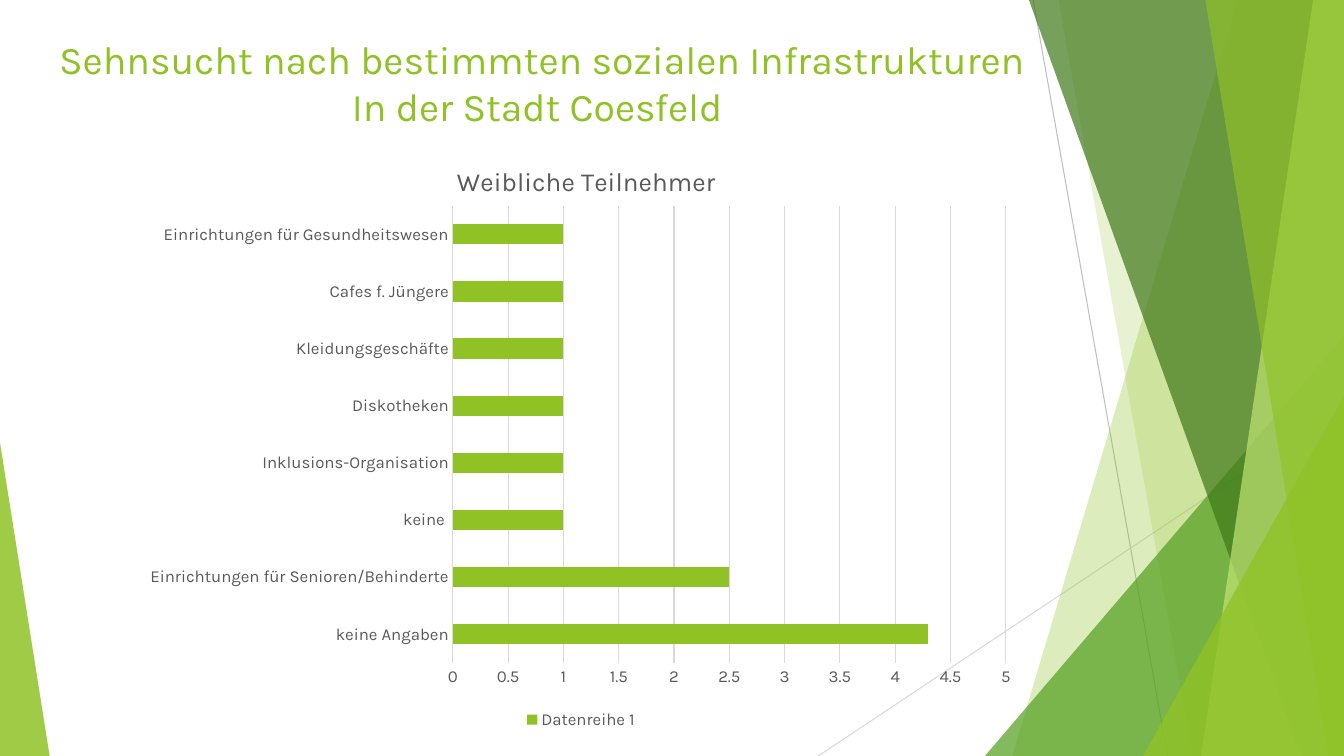
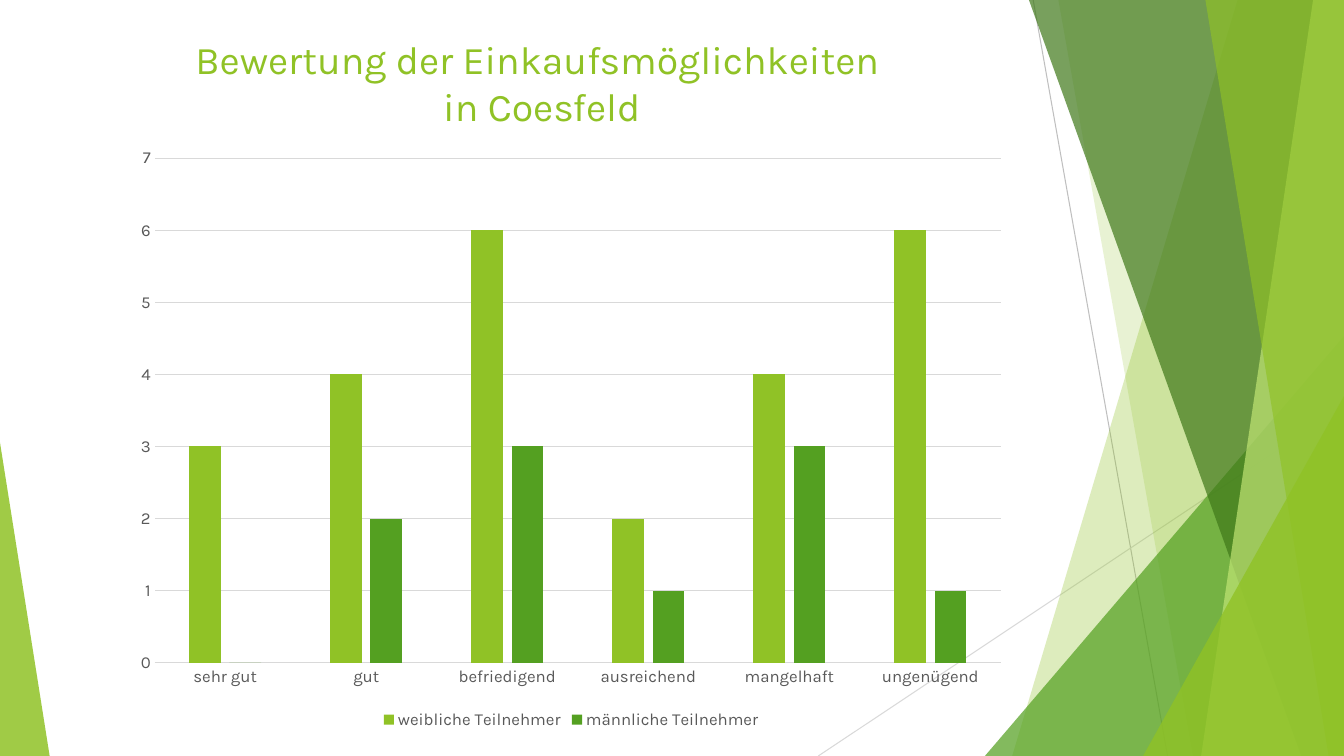
"""Build two survey result slides with a shared facet decoration."""
from collections import namedtuple

from lxml import etree
from pptx import Presentation
from pptx import util as u
from pptx.chart import data as chart_data
from pptx.dml import color
from pptx.enum import chart as chart_enum
from pptx.enum import shapes, text
from pptx.oxml import ns

Box = namedtuple("Box", "left top width height")

COLORS = {
    "lime": "90C226",
    "green": "54A021",
    "forest": "3F7819",
    "pale": "C0E474",
    "label": "595959",
    "grid": "D9D9D9",
    "ray": "BFBFBF",
}
FONT = "Karla"
SLIDE = Box(0, 0, 960, 540)
TITLE = Box(0, 22, 774, 75)

RAYS = [("ray", 738, 0, 834, 540), ("grid", 960, 290, 584.5, 540)]
FACETS = [
    ("veil", "lime", 30, (884, 723)),
    ("veil", "lime", 20, (756, 852)),
    ("corner", "green", 72, (703.5, 240, 256.5, 300, 1)),
    ("veil", "forest", 70, (735, 929.5)),
    ("veil", "pale", 70, (938, 858)),
    ("veil", "lime", 65, (861, 949)),
    ("corner", "lime", 80, (816.5, 283, 143.5, 257, 1)),
    ("corner", "lime", 85, (0, 316, 35.5, 224, 0)),
]

RESULTS = [
    {
        "title": ["Sehnsucht nach bestimmten sozialen Infrastrukturen", "In der Stadt Coesfeld "],
        "type": chart_enum.XL_CHART_TYPE.BAR_CLUSTERED,
        "box": Box(95, 97, 640, 427),
        "plot_box": Box(323.5, 147, 395, 326.5),
        "heading": "Weibliche Teilnehmer",
        "heading_box": Box(323, 114, 185, 22),
        "plot": {"gap_width": 182},
        "scale": {"minimum_scale": 0, "maximum_scale": 5, "major_unit": 0.5},
        "categories": [
            "keine Angaben", "Einrichtungen für Senioren/Behinderte", "keine ",
            "Inklusions-Organisation", "Diskotheken", "Kleidungsgeschäfte",
            "Cafes f. Jüngere", "Einrichtungen für Gesundheitswesen",
        ],
        "series": [("Datenreihe 1", "lime", [4.3, 2.5, 1, 1, 1, 1, 1, 1])],
    },
    {
        "title": ["Bewertung der Einkaufsmöglichkeiten ", "in Coesfeld"],
        "type": chart_enum.XL_CHART_TYPE.COLUMN_CLUSTERED,
        "box": Box(88, 97, 640, 427),
        "plot_box": Box(110.5, 113, 604.5, 360.5),
        "heading": None,
        "plot": {"gap_width": 219, "overlap": -27},
        "scale": {"minimum_scale": 0, "maximum_scale": 7, "major_unit": 1},
        "categories": [
            "sehr gut", "gut", "befriedigend", "ausreichend", "mangelhaft", "ungenügend",
        ],
        "series": [
            ("weibliche Teilnehmer", "lime", [3, 4, 6, 2, 4, 6]),
            ("männliche Teilnehmer", "green", [0, 2, 3, 1, 3, 1]),
        ],
    },
]


def rgb(name):
    """Return the named colour."""
    return color.RGBColor.from_string(COLORS[name])


def apply(target, values):
    """Set each attribute named in a dict."""
    for name, value in values.items():
        setattr(target, name, value)


def style_font(font, size, color_name):
    """Set the font face, size and colour."""
    apply(font, {"name": FONT, "size": u.Pt(size), "bold": False})
    font.color.rgb = rgb(color_name)


def style_line(line, color_name):
    """Make a line thin and coloured."""
    line.color.rgb = rgb(color_name)
    line.width = u.Pt(0.75)


def points(box):
    """Return the four lengths of a box in points."""
    return [u.Pt(value) for value in box]


def add_ray(slide, box, color_name, x1, y1, x2, y2):
    """Draw a thin diagonal line inside the box."""
    ends = points((box.left + x1, box.top + y1, box.left + x2, box.top + y2))
    ray = slide.shapes.add_connector(shapes.MSO_CONNECTOR.STRAIGHT, *ends)
    style_line(ray.line, color_name)
    etree.SubElement(ray.element.spPr, ns.qn("a:effectLst"))


def add_veil(slide, box, top_x, bottom_x):
    """Draw a slanted area that reaches the right edge of the box."""
    right, bottom = box.left + box.width, box.top + box.height
    builder = slide.shapes.build_freeform(u.Pt(box.left + top_x), u.Pt(box.top), scale=1.0)
    corners = [(right, box.top), (right, bottom), (box.left + bottom_x, bottom)]
    builder.add_line_segments([points(corner) for corner in corners], close=True)
    return builder.convert_to_shape()


def add_corner(slide, box, left, top, width, height, apex):
    """Draw a right triangle inside the box."""
    place = points((box.left + left, box.top + top, width, height))
    corner = slide.shapes.add_shape(shapes.MSO_SHAPE.ISOSCELES_TRIANGLE, *place)
    corner.adjustments[0] = apex
    return corner


def add_decoration(slide, box):
    """Draw the rays and translucent facets."""
    for ray in RAYS:
        add_ray(slide, box, *ray)
    builders = {"veil": add_veil, "corner": add_corner}
    for kind, color_name, opacity, geometry in FACETS:
        shape = builders[kind](slide, box, *geometry)
        shape.shadow.inherit = False
        shape.line.fill.background()
        shape.fill.solid()
        shape.fill.fore_color.rgb = rgb(color_name)
        tint = shape.element.spPr.find(f"{ns.qn('a:solidFill')}/{ns.qn('a:srgbClr')}")
        etree.SubElement(tint, ns.qn("a:alpha"), val=str(opacity * 1000))


def add_title(slide, box, lines):
    """Write the centred slide title."""
    frame = slide.shapes.add_textbox(*points(box)).text_frame
    apply(frame, {"word_wrap": True, "auto_size": text.MSO_AUTO_SIZE.SHAPE_TO_FIT_TEXT})
    frame.text = "\n".join(lines)
    for paragraph in frame.paragraphs:
        paragraph.alignment = text.PP_ALIGN.CENTER
        style_font(paragraph.runs[0].font, 28, "lime")


def set_layout(element, outer, inner, is_plot):
    """Fix the place of a chart part within the chart box."""
    for old in element.findall(ns.qn("c:layout")):
        element.remove(old)
    layout = etree.Element(ns.qn("c:layout"))
    manual = etree.SubElement(layout, ns.qn("c:manualLayout"))
    values = {"xMode": "edge", "yMode": "edge"}
    values["x"] = (inner.left - outer.left) / outer.width
    values["y"] = (inner.top - outer.top) / outer.height
    if is_plot:
        values = {"layoutTarget": "inner", **values}
        values["w"] = inner.width / outer.width
        values["h"] = inner.height / outer.height
    for name, value in values.items():
        etree.SubElement(manual, ns.qn(f"c:{name}"), val=str(value))
    element.insert(0 if is_plot else 1, layout)


def style_axes(chart, scale):
    """Format both axes and the gridlines."""
    for axis in (chart.category_axis, chart.value_axis):
        apply(axis, {
            "major_tick_mark": chart_enum.XL_TICK_MARK.NONE,
            "minor_tick_mark": chart_enum.XL_TICK_MARK.NONE,
        })
        style_font(axis.tick_labels.font, 12, "label")
    style_line(chart.category_axis.format.line, "grid")
    apply(chart.value_axis, {"has_major_gridlines": True, **scale})
    chart.value_axis.format.line.fill.background()
    style_line(chart.value_axis.major_gridlines.format.line, "grid")


def add_result_chart(slide, box, result):
    """Place a bar or column chart with its legend."""
    data = chart_data.CategoryChartData()
    data.categories = result["categories"]
    for name, _, values in result["series"]:
        data.add_series(name, values)
    chart = slide.shapes.add_chart(result["type"], *points(box), data).chart
    style_font(chart.font, 10, "label")
    apply(chart, {"has_legend": True, "has_title": bool(result["heading"])})
    apply(chart.legend, {
        "position": chart_enum.XL_LEGEND_POSITION.BOTTOM,
        "include_in_layout": False,
    })
    style_font(chart.legend.font, 12, "label")
    if result["heading"]:
        frame = chart.chart_title.text_frame
        frame.text = result["heading"]
        style_font(frame.paragraphs[0].runs[0].font, 18.6, "label")
        set_layout(chart.chart_title.element, box, result["heading_box"], False)
    plot = chart.plots[0]
    apply(plot, {"vary_by_categories": False, **result["plot"]})
    for series, (_, color_name, _) in zip(plot.series, result["series"]):
        series.format.fill.solid()
        series.format.fill.fore_color.rgb = rgb(color_name)
    style_axes(chart, result["scale"])
    plot_area = chart.element.find(f".//{ns.qn('c:plotArea')}")
    set_layout(plot_area, box, result["plot_box"], True)


def add_result_slide(presentation, box, result):
    """Add one slide with decoration, title and chart."""
    slide = presentation.slides.add_slide(presentation.slide_layouts[6])
    add_decoration(slide, box)
    add_title(slide, TITLE, result["title"])
    add_result_chart(slide, result["box"], result)


def main():
    """Build and save the presentation."""
    presentation = Presentation()
    apply(presentation, {
        "slide_width": u.Pt(SLIDE.width),
        "slide_height": u.Pt(SLIDE.height),
    })
    for result in RESULTS:
        add_result_slide(presentation, SLIDE, result)
    presentation.save("out.pptx")


if __name__ == "__main__":
    main()
